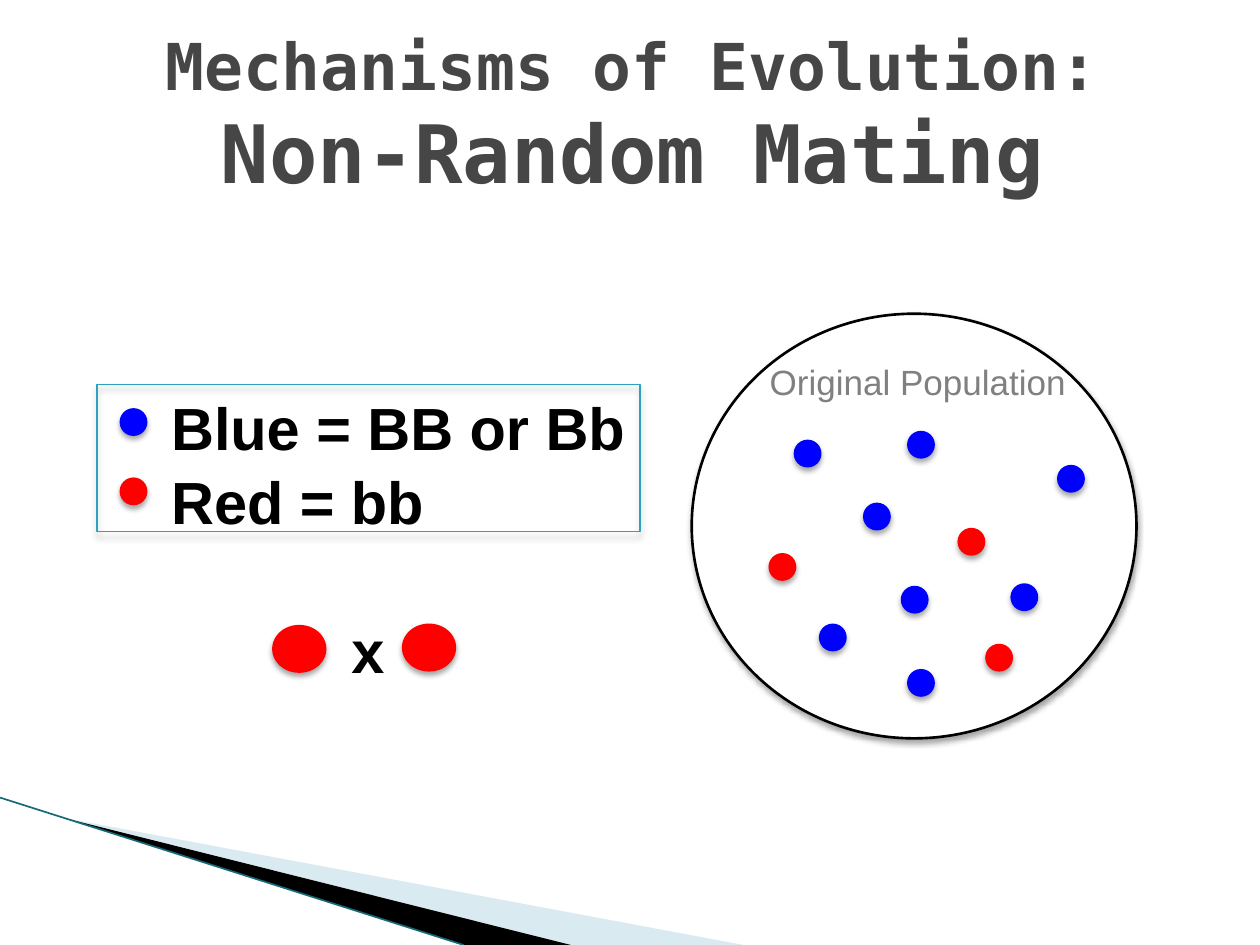
"""Build the slide on non-random mating as a mechanism of evolution."""
from lxml.etree import SubElement
from pptx import Presentation
from pptx.dml.color import RGBColor
from pptx.enum.shapes import MSO_CONNECTOR, MSO_SHAPE
from pptx.enum.text import MSO_ANCHOR, PP_ALIGN
from pptx.oxml.ns import qn
from pptx.util import Inches, Pt

BLUE, RED, BLACK, WHITE = "0000FF", "FF0000", "000000", "FFFFFF"
GREY, DARK, TEAL, EDGE, PALE = "808080", "464646", "2DA2BF", "16697A", "A0CBDC"
SANS, MONO = "Arial", "DejaVu Sans Mono"

DOT = (0.2, 0.2)
MATE = (0.41, 0.36)
DOTS = {
    BLUE: [(7.21, 3.43), (8.03, 4.64), (6.51, 4.96), (6.31, 3.5), (7.16, 4.66),
           (7.21, 5.32), (6.86, 4), (8.4, 3.7)],
    RED: [(7.83, 5.12), (7.61, 4.2), (6.11, 4.4)],
}
KEYS = [(BLUE, 3.25), (RED, 3.8)]
MATES = [(3.2, 4.96), (2.17, 4.97)]
SWOOSH = [
    (PALE, 40, [(0.55, 6.5), (5.9, 7.5), (4.53, 7.5)]),
    (BLACK, 100, [(0.54, 6.5), (4.53, 7.5), (3.68, 7.5)]),
]
TITLE = [("Mechanisms of Evolution: ", 36.9), ("Non-Random Mating", 46)]
LEGEND = [[("Blue = BB or Bb", 34)], [("Red = bb", 34)]]


def tint(hue):
    return RGBColor.from_string(hue)


def shade(shape, blur, dist):
    fx = SubElement(shape._element.spPr, qn("a:effectLst"))
    cast = SubElement(fx, qn("a:outerShdw"), blurRad=str(Pt(blur)),
                      dist=str(Pt(dist)), dir="5400000", rotWithShape="0")
    hue = SubElement(cast, qn("a:srgbClr"), val=BLACK)
    SubElement(hue, qn("a:alpha"), val="35000")


def draw(kind, spot, size, fill, line, wide=1.5, blur=3, dist=2):
    shape = shapes.add_shape(kind, *map(Inches, spot + size))
    if fill:
        shape.fill.solid()
        shape.fill.fore_color.rgb = tint(fill)
    else:
        shape.fill.background()
    shape.line.color.rgb = tint(line)
    shape.line.width = Pt(wide)
    shade(shape, blur, dist)


def oval(spot, size, hue):
    draw(MSO_SHAPE.OVAL, spot, size, hue, hue)


def write(spot, paras, hue, face=SANS, bold=True, top=0.15, side=0.1,
          align=PP_ALIGN.LEFT, anchor=MSO_ANCHOR.TOP):
    frame = shapes.add_textbox(*map(Inches, spot)).text_frame
    frame.word_wrap = True
    frame.vertical_anchor = anchor
    frame.margin_left = frame.margin_right = Inches(side)
    frame.margin_top = frame.margin_bottom = Inches(top)
    for i, runs in enumerate(paras):
        para = frame.add_paragraph() if i else frame.paragraphs[0]
        para.alignment = align
        if i:
            para.space_before = Pt(2)
        for text, size in runs:
            run = para.add_run()
            run.text = text
            run.font.size = Pt(size)
            run.font.name = face
            run.font.bold = bold
            run.font.color.rgb = tint(hue)


def sweep():
    for hue, alpha, points in SWOOSH:
        first, *rest = [tuple(map(Inches, point)) for point in points]
        path = shapes.build_freeform(*first)
        path.add_line_segments(rest)
        shape = path.convert_to_shape()
        shape.shadow.inherit = False
        shape.line.fill.background()
        shape.fill.solid()
        shape.fill.fore_color.rgb = tint(hue)
        if alpha < 100:
            node = shape._element.spPr.find(".//" + qn("a:srgbClr"))
            SubElement(node, qn("a:alpha"), val=str(alpha * 1000))
    edge = shapes.add_connector(MSO_CONNECTOR.STRAIGHT,
                                *map(Inches, (0, 6.33, 3.68, 7.5)))
    edge.line.color.rgb = tint(EDGE)
    edge.line.width = Pt(0.95)
    SubElement(edge._element.spPr, qn("a:effectLst"))


deck = Presentation()
deck.slide_width, deck.slide_height = Inches(10), Inches(7.5)
shapes = deck.slides.add_slide(deck.slide_layouts[6]).shapes

sweep()
draw(MSO_SHAPE.OVAL, (5.49, 2.49), (3.53, 3.37), WHITE, BLACK)
write((5.95, 2.73, 2.67, 0.5), [[("Original Population", 20)]], GREY,
      bold=False, top=0.13, align=PP_ALIGN.CENTER)
for hue, spots in DOTS.items():
    for spot in spots:
        oval(spot, DOT, hue)

write((0.96, 0.27, 8.12, 1.25), [TITLE], DARK, MONO, top=0.05,
      align=PP_ALIGN.CENTER, anchor=MSO_ANCHOR.MIDDLE)

write((1.26, 2.95, 3.99, 1.72), LEGEND, BLACK)
for hue, y in KEYS:
    oval((0.96, y), DOT, hue)
draw(MSO_SHAPE.RECTANGLE, (0.77, 3.05), (4.31, 1.17), None, TEAL, 0.75, 4, 3)

write((2.69, 4.72, 0.51, 1.08), [[("x", 34)]], BLACK)
for spot in MATES:
    oval(spot, MATE, RED)

deck.save("out.pptx")
